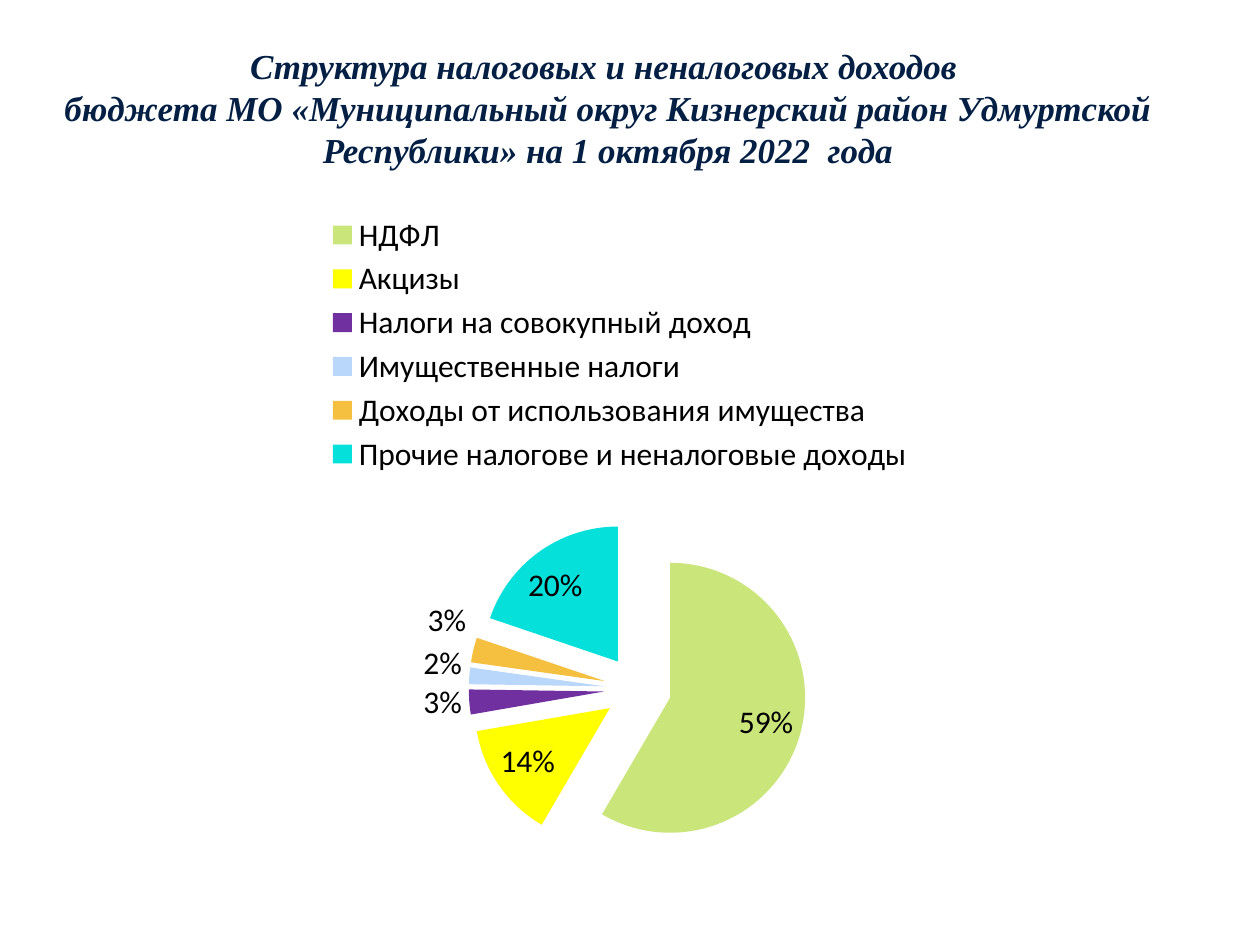
from lxml.etree import SubElement
from pptx import Presentation
from pptx.chart.data import CategoryChartData
from pptx.dml.color import RGBColor
from pptx.enum.chart import XL_CHART_TYPE as Chart, XL_LABEL_POSITION as LabelPos
from pptx.enum.chart import XL_LEGEND_POSITION as LegendPos
from pptx.enum.text import MSO_ANCHOR, PP_ALIGN
from pptx.oxml.ns import qn
from pptx.util import Inches, Pt

NAVY = RGBColor(0x04, 0x1F, 0x44)
BLACK = RGBColor(0x00, 0x00, 0x00)
LIME = RGBColor(0xCA, 0xE6, 0x7B)
YELLOW = RGBColor(0xFF, 0xFF, 0x00)
PURPLE = RGBColor(0x70, 0x30, 0xA0)
SKY = RGBColor(0xB9, 0xD6, 0xFB)
AMBER = RGBColor(0xF5, 0xC0, 0x40)
TURQUOISE = RGBColor(0x05, 0xE0, 0xDB)

WIDTH, HEIGHT = Inches(10), Inches(7.5)
TITLE = (
    "Структура налоговых и неналоговых доходов \v"
    "бюджета МО «Муниципальный округ Кизнерский район Удмуртской "
    "Республики» на 1 октября 2022  года"
)
INCOME = [
    ("НДФЛ", 59, LIME),
    ("Акцизы", 14, YELLOW),
    ("Налоги на совокупный доход", 3, PURPLE),
    ("Имущественные налоги", 2, SKY),
    ("Доходы от использования имущества", 3, AMBER),
    ("Прочие налогове и неналоговые доходы", 20, TURQUOISE),
]


def box(x, y, w, h):
    return int(x * WIDTH), int(y * HEIGHT), int(w * WIDTH), int(h * HEIGHT)


def set_font(font, name, size, color, bold=False, italic=False):
    font.name, font.size = name, Pt(size)
    font.bold, font.italic = bold, italic
    font.color.rgb = color


def write(tf, text, align=PP_ALIGN.CENTER, **fmt):
    tf.word_wrap = True
    tf.vertical_anchor = MSO_ANCHOR.MIDDLE
    p = tf.paragraphs[0]
    p.text = text
    p.alignment = align
    for r in p.runs:
        set_font(r.font, **fmt)


def add_title(s):
    sp = s.shapes.title
    sp.left, sp.top, sp.width, sp.height = box(0, 0.052, 0.965, 0.123)
    write(sp.text_frame, TITLE, name="Times New Roman", size=20,
          color=NAVY, bold=True, italic=True)


def place(parent, after, x, y, w, h, inner=False):
    for old in parent.findall(qn("c:layout")):
        parent.remove(old)
    layout = SubElement(parent, qn("c:layout"))
    manual = SubElement(layout, qn("c:manualLayout"))
    entries = [("xMode", "edge"), ("yMode", "edge"),
               ("x", x), ("y", y), ("w", w), ("h", h)]
    if inner:
        entries.insert(0, ("layoutTarget", "inner"))
    for tag, value in entries:
        SubElement(manual, qn(f"c:{tag}")).set("val", str(value))
    if after is None:
        parent.insert(0, layout)
    else:
        after.addnext(layout)


def explode(series, percent):
    explosion = SubElement(series._element, qn("c:explosion"))
    explosion.set("val", str(percent))
    series._element.find(qn("c:dPt")).addprevious(explosion)


def add_income_pie(s):
    data = CategoryChartData()
    data.categories = [name for name, _, _ in INCOME]
    data.add_series("Series 1", [share for _, share, _ in INCOME])
    frame = s.shapes.add_chart(Chart.PIE, *box(0.023, 0.208, 0.938, 0.729), data)
    chart = frame.chart
    set_font(chart.font, "Calibri", 18, BLACK)
    chart.has_title = False

    chart.has_legend = True
    legend = chart.legend
    legend.position = LegendPos.TOP
    legend.include_in_layout = False
    place(legend._element, legend._element.find(qn("c:legendPos")),
          0.25, 0.02, 0.5, 0.39)

    plot = chart.plots[0]
    plot.vary_by_categories = True
    plot.has_data_labels = True
    labels = plot.data_labels
    labels.show_value = True
    labels.show_percentage = False
    labels.number_format = '0"%"'
    labels.number_format_is_linked = False
    labels.position = LabelPos.BEST_FIT
    place(plot._element.getparent(), None, 0.37, 0.47, 0.29, 0.49, inner=True)

    series = plot.series[0]
    for i, (_, _, color) in enumerate(INCOME):
        fill = series.points[i].format.fill
        fill.solid()
        fill.fore_color.rgb = color
    explode(series, 25)


def main():
    prs = Presentation()
    prs.slide_width, prs.slide_height = WIDTH, HEIGHT
    s = prs.slides.add_slide(prs.slide_layouts[5])
    add_title(s)
    add_income_pie(s)
    prs.save("out.pptx")


if __name__ == "__main__":
    main()
